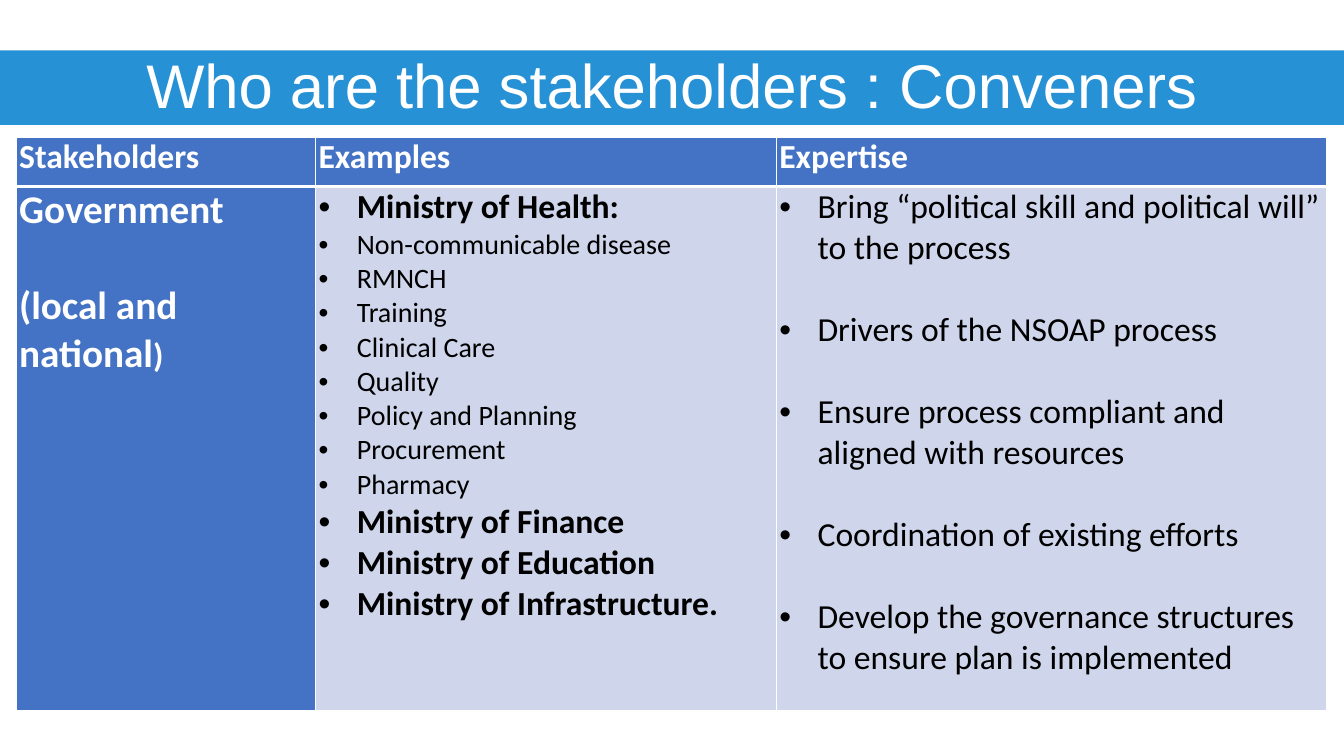
from dataclasses import dataclass

from lxml.etree import SubElement
from pptx import Presentation
from pptx.dml.color import RGBColor
from pptx.enum.shapes import MSO_SHAPE
from pptx.enum.text import MSO_ANCHOR, MSO_AUTO_SIZE, PP_ALIGN
from pptx.oxml.ns import qn
from pptx.util import Inches, Pt


@dataclass(frozen=True)
class Theme:
    banner: RGBColor = RGBColor.from_string("2791D5")
    header: RGBColor = RGBColor.from_string("4472C4")
    body: RGBColor = RGBColor.from_string("CFD5EA")
    white: RGBColor = RGBColor.from_string("FFFFFF")
    black: RGBColor = RGBColor.from_string("000000")
    title_font: str = "Arial"
    table_font: str = "Calibri"
    title_size: int = 44
    group_size: int = 28
    text_size: int = 24
    detail_size: int = 20
    line_height: float = 1.22


theme = Theme()


def add_run(paragraph, text, size, color, bold=False, font=theme.table_font):
    run = paragraph.add_run()
    run.text = text
    run.font.name = font
    run.font.size = Pt(size)
    run.font.bold = bold
    run.font.color.rgb = color


def style_cell(cell, fill, top_width, bottom_width):
    cell.margin_left = cell.margin_right = Inches(0.03)
    cell.margin_top = cell.margin_bottom = 0
    cell.vertical_anchor = MSO_ANCHOR.TOP
    properties = cell._tc.get_or_add_tcPr()
    for side, width in (("L", 1), ("R", 1), ("T", top_width), ("B", bottom_width)):
        line = SubElement(properties, qn(f"a:ln{side}"), w=str(Pt(width)))
        line_fill = SubElement(line, qn("a:solidFill"))
        SubElement(line_fill, qn("a:srgbClr"), val=str(theme.white))
    cell.fill.solid()
    cell.fill.fore_color.rgb = fill


presentation = Presentation()
presentation.slide_width = Inches(13.33)
presentation.slide_height = Inches(7.5)
slide = presentation.slides.add_slide(presentation.slide_layouts[5])

# Title on its banner
title = slide.shapes.title
title.left, title.top = Inches(0.92), Inches(0.4)
title.width, title.height = Inches(11.5), Inches(0.96)
title_frame = title.text_frame
title_frame.auto_size = MSO_AUTO_SIZE.NONE
title_frame.vertical_anchor = MSO_ANCHOR.MIDDLE
title_paragraph = title_frame.paragraphs[0]
title_paragraph.alignment = PP_ALIGN.CENTER
title_paragraph.line_spacing = 0.9
add_run(title_paragraph, "Who are the stakeholders : Conveners",
        theme.title_size, theme.white, font=theme.title_font)

banner = slide.shapes.add_shape(
    MSO_SHAPE.RECTANGLE, 0, Inches(0.5), presentation.slide_width, Inches(0.74))
banner.shadow.inherit = False
banner.fill.solid()
banner.fill.fore_color.rgb = theme.banner
banner.line.fill.background()
title.element.addprevious(banner.element)

# Table grid
column_widths = (2.97, 4.57, 5.46)
row_heights = (0.49, 5.2)
table = slide.shapes.add_table(
    len(row_heights), len(column_widths), Inches(0.16), Inches(1.36),
    Inches(sum(column_widths)), Inches(sum(row_heights))).table
for column, width in zip(table.columns, column_widths):
    column.width = Inches(width)
for row, height in zip(table.rows, row_heights):
    row.height = Inches(height)

# Header row
for index, heading in enumerate(("Stakeholders", "Examples", "Expertise")):
    cell = table.cell(0, index)
    style_cell(cell, theme.header, 1, 3)
    add_run(cell.text_frame.paragraphs[0], heading,
            theme.text_size, theme.white, bold=True)

# Stakeholder group
group_cell = table.cell(1, 0)
style_cell(group_cell, theme.header, 3, 1)
group_frame = group_cell.text_frame
add_run(group_frame.paragraphs[0], "Government",
        theme.group_size, theme.white, bold=True)
level_paragraph = group_frame.add_paragraph()
level_paragraph.space_before = Pt(theme.group_size * theme.line_height)
add_run(level_paragraph, "(local and national",
        theme.group_size, theme.white, bold=True)
add_run(level_paragraph, ")", theme.text_size, theme.white, bold=True)

# Bulleted lists: text, size, bold
departments = (
    "Non-communicable disease", "RMNCH", "Training", "Clinical Care",
    "Quality", "Policy and Planning", "Procurement", "Pharmacy")
other_ministries = (
    "Ministry of Finance", "Ministry of Education", "Ministry of Infrastructure.")
examples = [("Ministry of Health:", theme.text_size, True)]
examples += [(name, theme.detail_size, False) for name in departments]
examples += [(name, theme.text_size, True) for name in other_ministries]
expertise = [(text, theme.text_size, False) for text in (
    "Bring “political skill and political will” to the process",
    "Drivers of the NSOAP process",
    "Ensure process compliant and aligned with resources",
    "Coordination of existing efforts",
    "Develop the governance structures to ensure plan is implemented")]
expertise_gap = theme.text_size * theme.line_height

for column_index, items, gap in ((1, examples, 0), (2, expertise, expertise_gap)):
    cell = table.cell(1, column_index)
    style_cell(cell, theme.body, 3, 1)
    frame = cell.text_frame
    for index, (text, size, bold) in enumerate(items):
        paragraph = frame.add_paragraph() if index else frame.paragraphs[0]
        properties = paragraph._p.get_or_add_pPr()
        properties.set("marL", str(Inches(0.38)))
        properties.set("indent", str(Inches(-0.38)))
        SubElement(properties, qn("a:buFont"), typeface="Arial")
        SubElement(properties, qn("a:buChar"), char="•")
        if index and gap:
            paragraph.space_before = Pt(gap)
        add_run(paragraph, text, size, theme.black, bold)

presentation.save("out.pptx")
